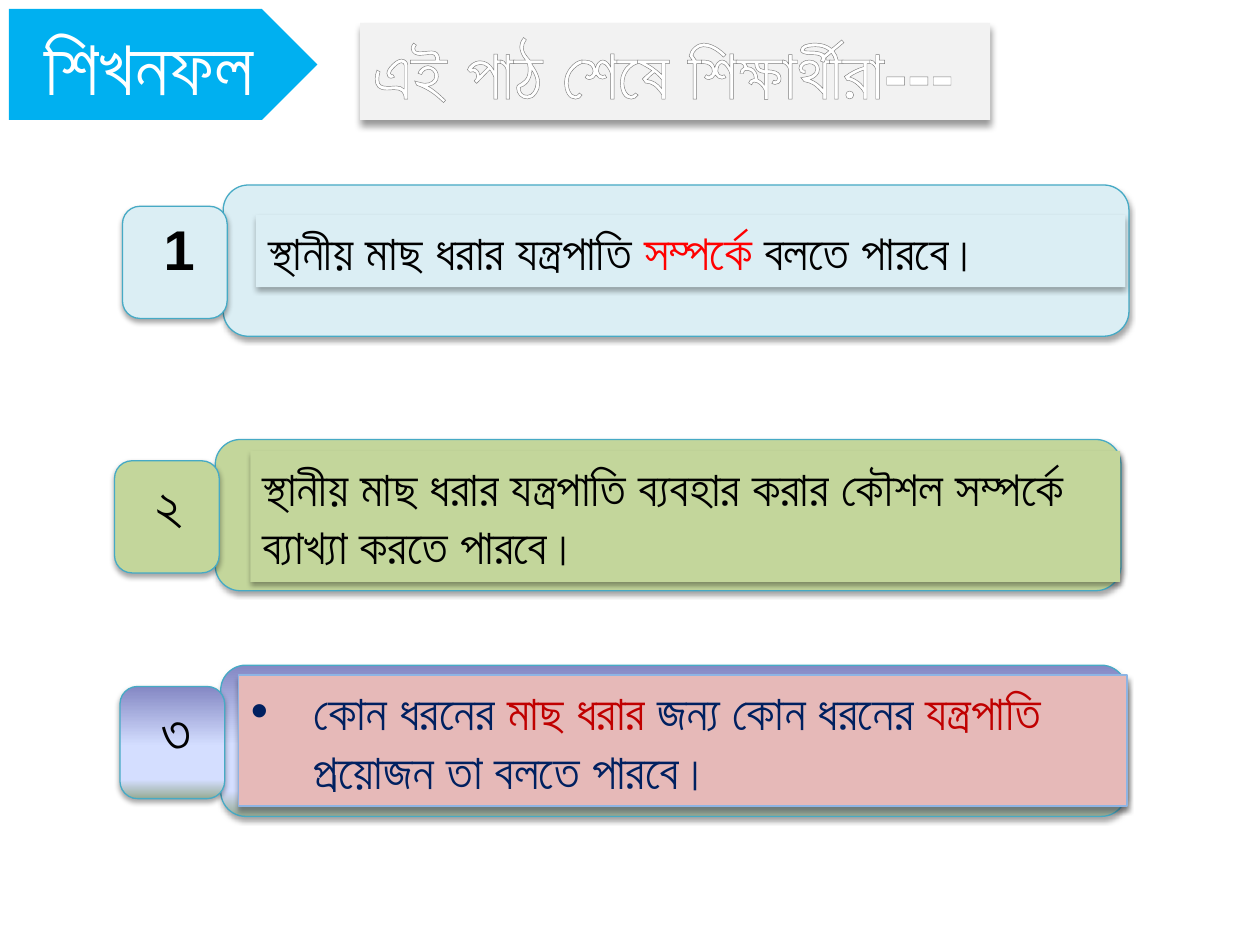
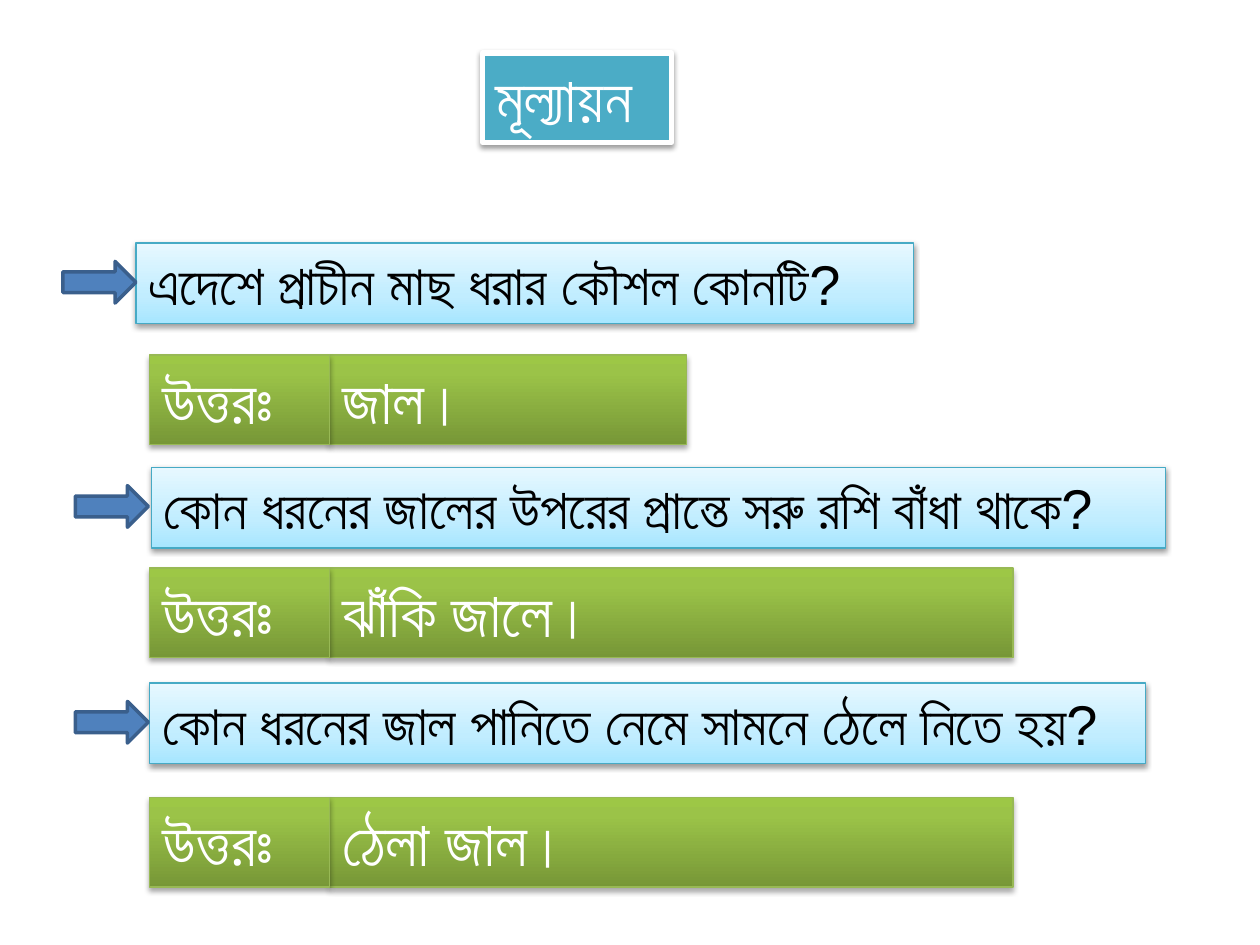
from lxml import etree
from pptx import Presentation
from pptx import util as u
from pptx.dml.color import RGBColor
from pptx.enum import shapes as es, text as et
from pptx.oxml.ns import qn

FONT = "Arial"
BLACK, WHITE, RED, NAVY, WINE = "000000", "FFFFFF", "FF0000", "002060", "C00000"
TEAL = ("46AAC5", 0.75)
# Gradients: stops and clockwise angle
DUSK = ([(0, "8488C4"), (53, "D4DEFF"), (83, "D4DEFF"), (100, "96AB94")], 90)
SKY = ([(0, "A7E6FF"), (35, "C1EDFF"), (100, "E7F8FF")], 270)
LEAF = ([(0, "779737"), (80, "9BC348"), (100, "9DC746")], 270)
CHROME = ([(0, WHITE), (9, WHITE), (50, "7F7F7F"), (79, WHITE), (100, WHITE)], 90)
# Shadows: opacity in percent, blur and distance in points
SOFT, CRISP, DEEP = (35, 3.1, 1.8), (38, 3.1, 1.6), (40, 4, 3)
RECT = es.MSO_SHAPE.RECTANGLE
ROUND = es.MSO_SHAPE.ROUNDED_RECTANGLE
LEFT, MID = et.PP_ALIGN.LEFT, et.PP_ALIGN.CENTER
TOP, HALF = et.MSO_ANCHOR.TOP, et.MSO_ANCHOR.MIDDLE


def rgb(code):
    return RGBColor.from_string(code)


def sub(node, tag, **attrs):
    return etree.SubElement(node, qn(tag), {k: str(v) for k, v in attrs.items()})


def blend(node, stops, angle):
    """Append a linear gradient fill to an XML node and return it."""
    fill = sub(node, "a:gradFill", rotWithShape=1)
    marks = sub(fill, "a:gsLst")
    for place, code in stops:
        sub(sub(marks, "a:gs", pos=place * 1000), "a:srgbClr", val=code)
    sub(fill, "a:lin", ang=angle * 60000, scaled=0)
    return fill


def paint(shape, fill, line=None, shade=None):
    """Set the fill, outline and shadow of a shape."""
    props = shape._element.spPr
    if fill is None:
        shape.fill.background()
    elif isinstance(fill, tuple):
        props.find(qn("a:prstGeom")).addnext(blend(props, *fill))
    else:
        shape.fill.solid()
        shape.fill.fore_color.rgb = rgb(fill)
    if line:
        shape.line.color.rgb = rgb(line[0])
        shape.line.width = u.Pt(line[1])
    else:
        shape.line.fill.background()
    shape.shadow.inherit = False
    if shade:
        alpha, blur, dist = shade
        cast = sub(props.find(qn("a:effectLst")), "a:outerShdw",
                   blurRad=u.Pt(blur), dist=u.Pt(dist), dir=5400000,
                   algn="t", rotWithShape=0)
        sub(sub(cast, "a:srgbClr", val=BLACK), "a:alpha", val=alpha * 1000)


def write(shape, runs, size, color=BLACK, bold=False, align=LEFT,
          wrap=True, grow=True, anchor=TOP, dot=False):
    """Fill a shape with one paragraph; runs is a string or (text, colour) pairs."""
    frame = shape.text_frame
    frame.word_wrap = wrap
    frame.auto_size = (et.MSO_AUTO_SIZE.SHAPE_TO_FIT_TEXT if grow
                       else et.MSO_AUTO_SIZE.NONE)
    frame.vertical_anchor = anchor
    para = frame.paragraphs[0]
    para.alignment = align
    if dot:
        props = para._p.get_or_add_pPr()
        props.set("marL", str(u.Cm(1.27)))
        props.set("indent", str(u.Cm(-1.27)))
        sub(props, "a:buFont", typeface=FONT)
        sub(props, "a:buChar", char="•")
    font = para.font
    font.name, font.size, font.bold = FONT, u.Pt(size), bold
    if isinstance(runs, str):
        font.color.rgb = rgb(color)
        para.add_run().text = runs
        return
    for words, tint in runs:
        run = para.add_run()
        run.text = words
        run.font.color.rgb = rgb(tint)


def box(parent, kind, x, y, w, h, fill, line=None, shade=None):
    shape = parent.shapes.add_shape(kind, u.Cm(x), u.Cm(y), u.Cm(w), u.Cm(h))
    paint(shape, fill, line, shade)
    return shape


def head(slide, words, x, y, w, h, size, fill, line, shade, bold=False):
    """Place and format the title placeholder at a fixed size."""
    title = slide.shapes.title
    title.left, title.top, title.width, title.height = map(u.Cm, (x, y, w, h))
    paint(title, fill, line, shade)
    write(title, words, size, WHITE, bold, grow=False)
    return title


def chrome(title):
    """Give title letters a thin outline and a gradient fill."""
    props = title.text_frame.paragraphs[0].runs[0]._r.get_or_add_rPr()
    edge = sub(props, "a:ln", w=u.Pt(0.83))
    sub(sub(edge, "a:solidFill"), "a:srgbClr", val="7D7D7D")
    blend(props, *CHROME)


def card(slide, x, y, num, fill, runs, area, tint=None, line=None, dot=False):
    """Numbered goal; x, y is the corner of the wide frame."""
    group = slide.shapes.add_group_shape()
    box(group, ROUND, x, y, 18.26, 3.05, fill, TEAL, SOFT)
    dx, dy, w, h = area
    note = box(group, RECT, x + dx, y + dy, w, h, tint or fill, line, SOFT)
    write(note, runs, 28, dot=dot)
    box(group, ROUND, x - 2.03, y + 0.43, 2.11, 2.26, fill, TEAL, SOFT)
    label = box(group, RECT, x - 1.45, y + 0.48, 1.02, 1.63,
                None if tint else fill)
    write(label, num, 32, bold=True, wrap=False)


def ask(slide, x, y, w, words, tip):
    """Question bar with an arrow before it."""
    bar = box(slide, RECT, x, y, w, 1.63, SKY, TEAL, CRISP)
    write(bar, words, 32)
    box(slide, es.MSO_SHAPE.RIGHT_ARROW, tip, y + 0.37, 1.47, 0.84,
        "4F81BD", ("3A5F8C", 2))


def reply(slide, y, w, words):
    """Answer bar with its label at the left."""
    group = slide.shapes.add_group_shape()
    for x, wide, part in ((6.65, w, words), (3.02, 3.63, "উত্তরঃ")):
        bar = box(group, RECT, x, y, wide, 1.8, LEAF, ("98B955", 0.75), SOFT)
        write(bar, part, 36, WHITE)


def goals(slide):
    title = head(slide, "এই পাঠ শেষে শিক্ষার্থীরা---", 7.26, 0.46, 12.7, 1.96,
                 40, "F2F2F2", None, DEEP, bold=True)
    chrome(title)
    card(slide, 4.5, 3.73, "1", "DBEEF4",
         [("স্থানীয় মাছ ধরার যন্ত্রপাতি ", BLACK), ("সম্পর্কে ", RED),
          ("বলতে পারবে।", BLACK)], (0.66, 0.61, 17.53, 1.45))
    card(slide, 4.34, 8.86, "২", "C3D69B",
         "স্থানীয় মাছ ধরার যন্ত্রপাতি ব্যবহার করার কৌশল সম্পর্কে ব্যাখ্যা করতে পারবে।",
         (0.71, 0.23, 17.53, 2.64))
    card(slide, 4.45, 13.41, "৩", DUSK,
         [("কোন ধরনের ", NAVY), ("মাছ ধরার", WINE),
          (" জন্য কোন ধরনের ", NAVY), ("যন্ত্রপাতি", WINE),
          (" প্রয়োজন তা বলতে পারবে।", NAVY)],
         (0.36, 0.2, 17.91, 2.64), "E6B9B8", ("8EB4E3", 0.75), dot=True)
    flag = box(slide, es.MSO_SHAPE.PENTAGON, 0.18, 0.18, 6.22, 2.24, "00B0F0")
    write(flag, "শিখনফল", 44, WHITE, bold=True, align=MID, grow=False,
          anchor=HALF)


def quiz(slide):
    head(slide, "মূল্যায়ন", 9.73, 1.07, 3.81, 1.8, 36,
         "4BACC6", (WHITE, 3), CRISP)
    ask(slide, 2.74, 4.9, 15.67, "এদেশে প্রাচীন মাছ ধরার কৌশল কোনটি?", 1.27)
    ask(slide, 3.05, 9.42, 20.45,
        "কোন ধরনের জালের উপরের প্রান্তে সরু রশি বাঁধা থাকে?", 1.52)
    ask(slide, 3.02, 13.77, 20.07,
        "কোন ধরনের জাল পানিতে নেমে সামনে ঠেলে নিতে হয়?", 1.52)
    reply(slide, 7.16, 7.19, "জাল।")
    reply(slide, 11.45, 13.77, "ঝাঁকি জালে।")
    reply(slide, 16.08, 13.77, "ঠেলা জাল।")


def main():
    deck = Presentation()
    deck.slide_width, deck.slide_height = u.Cm(25.4), u.Cm(19.05)
    for build in (goals, quiz):
        build(deck.slides.add_slide(deck.slide_layouts[5]))
    deck.save("out.pptx")


if __name__ == "__main__":
    main()
